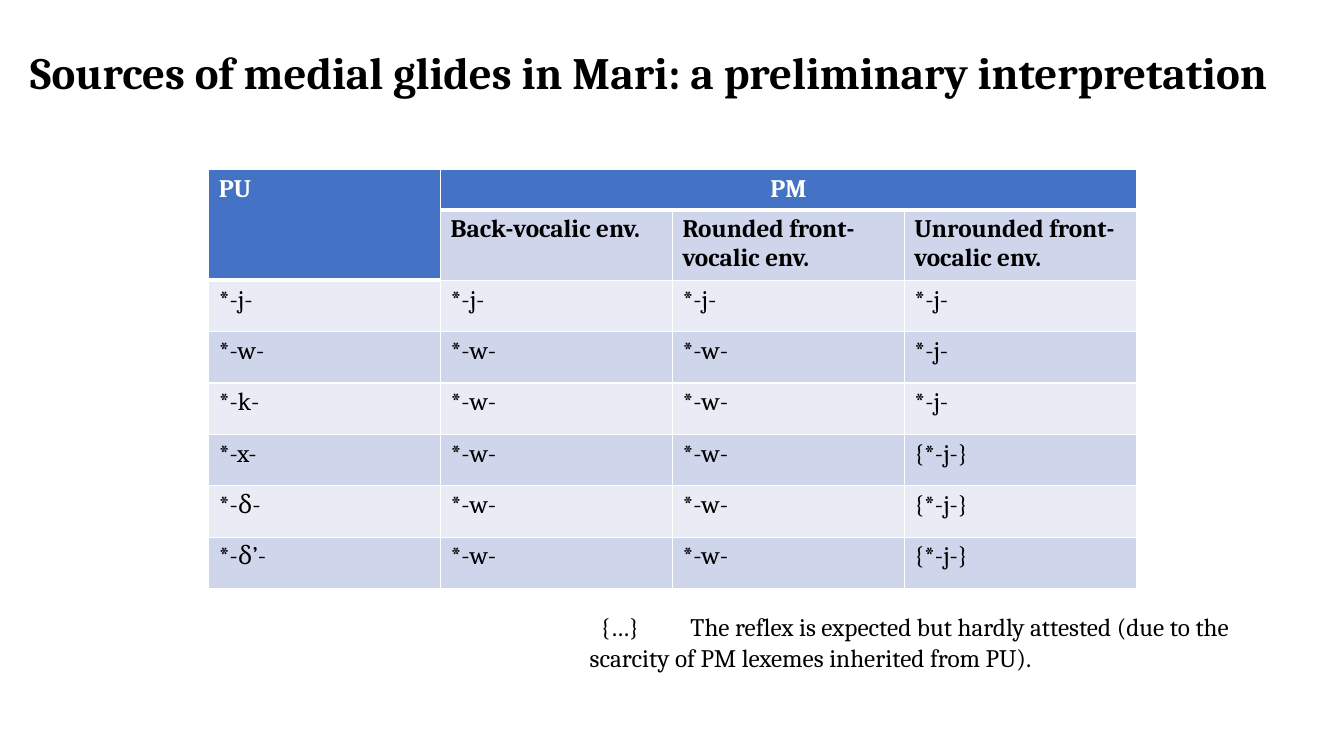
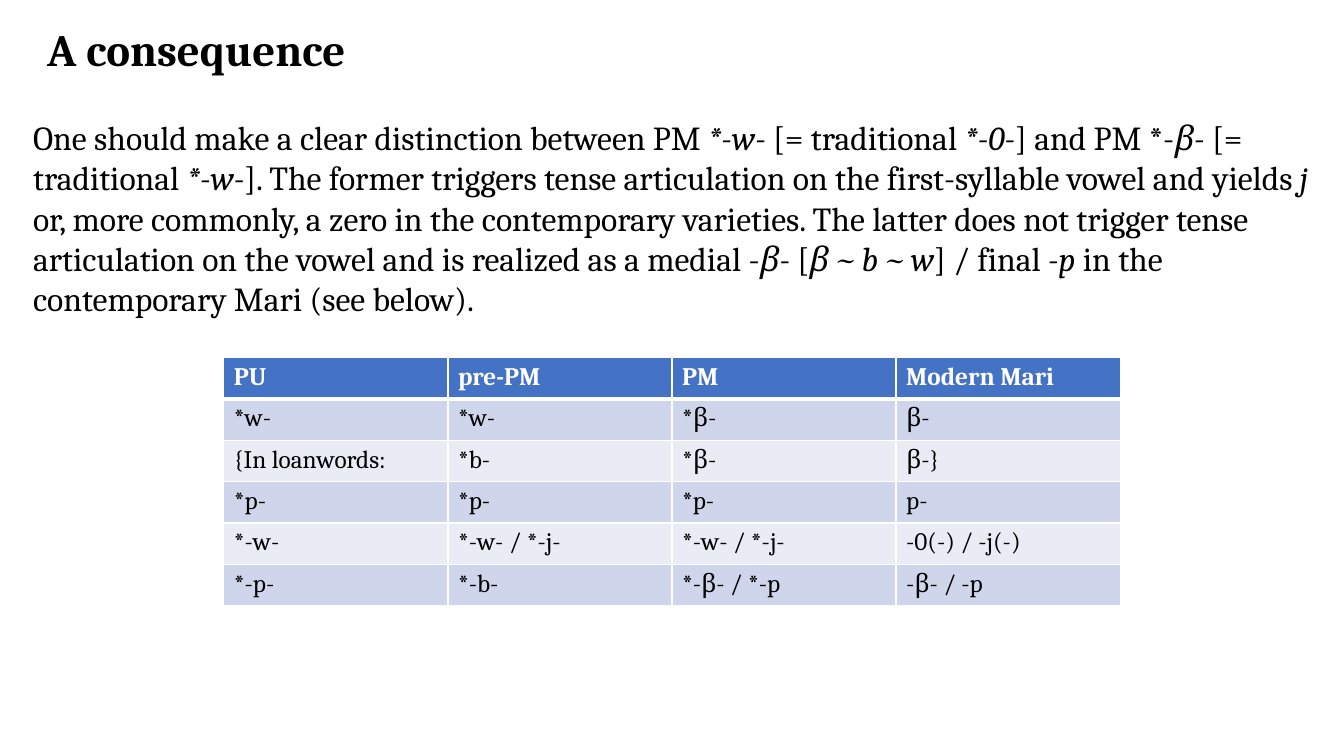
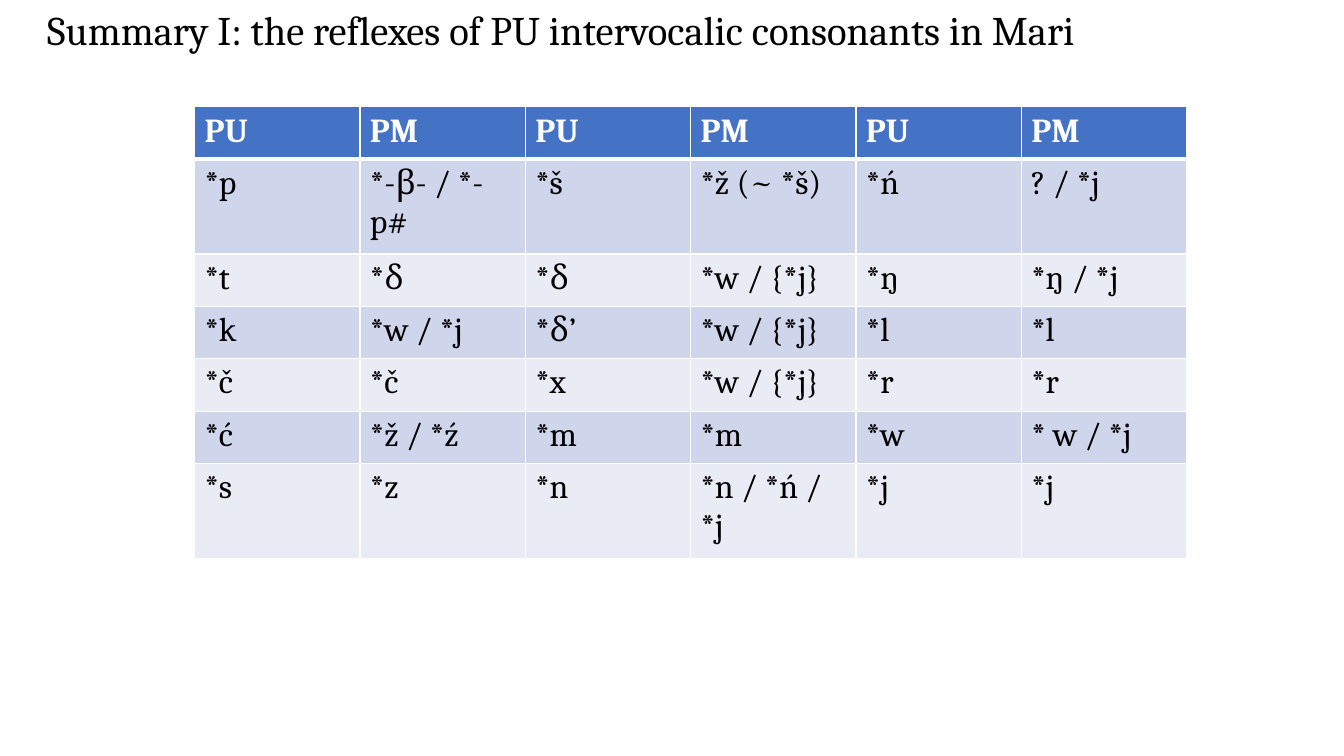
from lxml.etree import SubElement
from pptx import Presentation
from pptx.dml.color import RGBColor
from pptx.enum.text import MSO_ANCHOR, PP_ALIGN
from pptx.oxml.ns import qn
from pptx.util import Inches, Pt


def tint(code):
    return RGBColor.from_string(code)


def adorn(target, values):
    for name, value in values.items():
        setattr(target, name, value)


class Deck:
    FONT = "Cambria"
    INK = "000000"
    WHITE = "FFFFFF"
    HEAD = "4472C4"
    BANDS = ("E9EBF5", "CFD5EA")

    def __init__(self):
        self.show = Presentation()
        self.show.slide_width = Inches(13.33)
        self.show.slide_height = Inches(7.5)
        self.slide = None

    def page(self):
        self.slide = self.show.slides.add_slide(self.show.slide_layouts[6])

    def words(self, para, text, size, color=INK, bold=False):
        for order, part in enumerate(text.split("_")):
            if part:
                run = para.add_run()
                run.text = part
                adorn(run.font, {"name": self.FONT, "size": Pt(size),
                                 "bold": bold, "italic": order % 2 == 1})
                run.font.color.rgb = tint(color)

    def text(self, at, text, size, bold=False, frame=None, para=None):
        box = self.slide.shapes.add_textbox(*map(Inches, at)).text_frame
        adorn(box, {"word_wrap": True, **(frame or {})})
        first = box.paragraphs[0]
        adorn(first, para or {"space_before": Pt(5), "space_after": Pt(5)})
        self.words(first, text, size, bold=bold)
        return first

    def title(self, at, text, size=32, bold=True):
        self.text(at, text, size, bold, {"vertical_anchor": MSO_ANCHOR.MIDDLE},
                  {"line_spacing": 0.9 if bold else 1.0})

    def edge(self, cell, side, width):
        line = SubElement(cell._tc.get_or_add_tcPr(), qn(f"a:{side}"),
                          w=str(Pt(width)))
        fill = SubElement(line, qn("a:solidFill"))
        SubElement(fill, qn("a:srgbClr"), val=self.WHITE)

    def table(self, at, heights, lines, size=18, merges=(), heads=1):
        rows = [line.split("|") for line in lines]
        count = len(rows[0])
        left, top, width = at
        grid = self.slide.shapes.add_table(
            len(rows), count, Inches(left), Inches(top),
            Inches(width), Inches(sum(heights))).table
        for column in grid.columns:
            column.width = Inches(width / count)
        for row, height in zip(grid.rows, heights):
            row.height = Inches(height)
        for start, end in merges:
            grid.cell(*start).merge(grid.cell(*end))
        for r, row in enumerate(rows):
            for c, text in enumerate(row):
                cell = grid.cell(r, c)
                head = r == 0 or cell.is_spanned
                for side in ("lnL", "lnR") + (("lnT",) if r == 0 else ()):
                    self.edge(cell, side, 1)
                self.edge(cell, "lnB", 3 if head else 1)
                cell.fill.solid()
                cell.fill.fore_color.rgb = tint(
                    self.HEAD if head else self.BANDS[r % 2])
                self.words(cell.text_frame.paragraphs[0], text, size,
                           self.WHITE if head else self.INK, r < heads)
        return grid


def glides(deck):
    deck.page()
    deck.title((0.2, 0, 13.13, 1.48),
               "Sources of medial glides in Mari: a preliminary interpretation")
    grid = deck.table((2.07, 1.68, 9.2), [0.39, 0.68] + [0.51] * 6, [
        "PU|PM||",
        "|Back-vocalic env.|Rounded front-vocalic env.|Unrounded front-vocalic env.",
        "*-j-|*-j-|*-j-|*-j-",
        "*-w-|*-w-|*-w-|*-j-",
        "*-k-|*-w-|*-w-|*-j-",
        "*-x-|*-w-|*-w-|{*-j-}",
        "*-δ-|*-w-|*-w-|{*-j-}",
        "*-δ’-|*-w-|*-w-|{*-j-}",
    ], merges=[((0, 0), (1, 0)), ((0, 1), (0, 3))], heads=2)
    grid.cell(0, 1).text_frame.paragraphs[0].alignment = PP_ALIGN.CENTER
    note = deck.text(
        (5.75, 6.02, 7.58, 1.01),
        "{…} \tThe reflex is expected but hardly attested (due to the "
        "scarcity of PM lexemes inherited from PU).",
        18, frame={"margin_right": Inches(0.6)})
    note._p.get_or_add_pPr().set("indent", str(Inches(0.11)))


def result(deck):
    deck.page()
    deck.title((0.37, 0, 11.5, 1.03), "A consequence")
    deck.text(
        (0.23, 1.11, 13.11, 2.19),
        "One should make a clear distinction between PM _*-w-_ [= traditional "
        "_*-0-_] and PM *-_β- _[= traditional _*-w-_]. The former triggers "
        "tense articulation on the first-syllable vowel and yields _j_ or, "
        "more commonly, a zero in the contemporary varieties. The latter does "
        "not trigger tense articulation on the vowel and is realized as a "
        "medial -_β- _[_β ~ b ~ w_] / final _-p_ in the contemporary Mari "
        "(see below).", 24)
    deck.table((2.22, 3.55, 8.89), [0.41] * 6, [
        "PU|pre-PM|PM|Modern Mari",
        "*w-|*w-|*β-|β-",
        "{In loanwords:|*b-|*β-|β-}",
        "*p-|*p-|*p-|p-",
        "*-w-|*-w- / *-j-|*-w- / *-j-|-0(-) / -j(-)",
        "*-p-|*-b-|*-β- / *-p|-β- / -p",
    ])


def summary(deck):
    deck.page()
    deck.title((0.37, 0.01, 12.96, 0.57),
               "Summary I: the reflexes of PU intervocalic consonants in Mari",
               29, False)
    deck.table((1.93, 1.06, 9.84), [0.52, 0.94] + [0.52] * 4 + [0.94], [
        "PU|PM|PU|PM|PU|PM",
        "*p|*-β- / *-p#|*š|*ž (~ *š)|*ń|? / *j",
        "*t|*δ|*δ|*w / {*j}|*ŋ|*ŋ / *j",
        "*k|*w / *j|*δ’|*w / {*j}|*l|*l",
        "*č|*č|*x|*w / {*j}|*r|*r",
        "*ć|*ž / *ź|*m|*m|*w|* w / *j",
        "*s|*z|*n|*n / *ń / *j|*j|*j",
    ], 24)


def main():
    deck = Deck()
    for build in (glides, result, summary):
        build(deck)
    deck.show.save("out.pptx")


if __name__ == "__main__":
    main()
